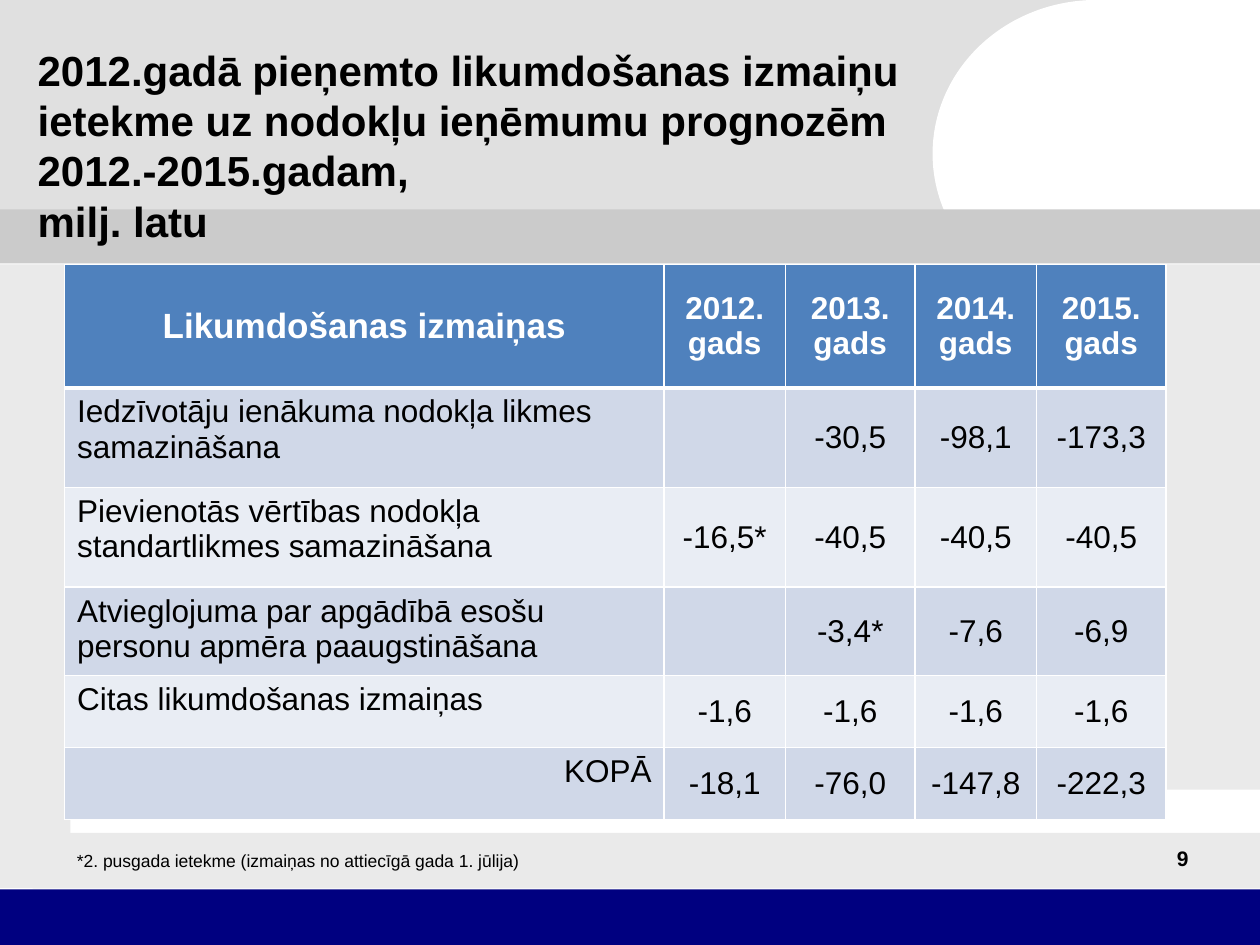
import pptx
import pptx.dml.color
import pptx.enum.shapes
import pptx.enum.text
import pptx.oxml.ns
import pptx.util
from lxml import etree
from pptx.util import Cm

ALIGN = pptx.enum.text.PP_ALIGN
ANCHOR = pptx.enum.text.MSO_ANCHOR
SHAPE = pptx.enum.shapes.MSO_SHAPE

# Backdrop shapes, back to front: kind, left, top, width, height (cm), fill
BACK = [
    (SHAPE.RECTANGLE, 0, 0, 23.09, 4.29, "E0E0E0"),
    (SHAPE.OVAL, 18.8, 0, 6.6, 6.2, "FFFFFF"),
    (SHAPE.RECTANGLE, 0, 5.33, 1.42, 12.57, "EAEAEA"),
    (SHAPE.RECTANGLE, 0.66, 16.79, 24.74, 1.12, "EAEAEA"),
    (SHAPE.RECTANGLE, 0, 17.93, 25.4, 1.12, "000080"),
    (SHAPE.RECTANGLE, 23.47, 5.33, 1.93, 10.59, "EAEAEA"),
    (SHAPE.RECTANGLE, 21.89, 0, 3.51, 5.13, "FFFFFF"),
    (SHAPE.RECTANGLE, 0, 4.22, 25.4, 1.09, "CBCBCB"),
]

TITLE = ("2012.gadā pieņemto likumdošanas izmaiņu ietekme uz nodokļu "
         "ieņēmumu prognozēm 2012.-2015.gadam, \nmilj. latu")
NOTE = "*2. pusgada ietekme (izmaiņas no attiecīgā gada 1. jūlija)"

ROWS = [
    ("Likumdošanas izmaiņas", "2012. gads", "2013. gads", "2014. gads",
     "2015. gads"),
    ("Iedzīvotāju ienākuma nodokļa likmes samazināšana",
     "", "-30,5", "-98,1", "-173,3"),
    ("Pievienotās vērtības nodokļa standartlikmes samazināšana",
     "-16,5*", "-40,5", "-40,5", "-40,5"),
    ("Atvieglojuma par apgādībā esošu personu apmēra paaugstināšana",
     "", "-3,4*", "-7,6", "-6,9"),
    ("Citas likumdošanas izmaiņas", "-1,6", "-1,6", "-1,6", "-1,6"),
    ("KOPĀ", "-18,1", "-76,0", "-147,8", "-222,3"),
]
WIDTHS = [12.09, 2.44, 2.62, 2.44, 2.62]
HEIGHTS = [2.49, 2.01, 2.01, 1.45, 1.45, 1.45]


def color(code):
    return pptx.dml.color.RGBColor.from_string(code)


def write(frame, text, size=18, ink="000000", bold=False, align=ALIGN.LEFT):
    """Put one formatted paragraph in a text frame."""
    para = frame.paragraphs[0]
    para.text = text
    para.alignment = align
    for run in para.runs:
        font = run.font
        font.name = "Arial"
        font.size = pptx.util.Pt(size)
        font.bold = bold
        font.color.rgb = color(ink)


def block(slide, kind, left, top, width, height, fill):
    shape = slide.shapes.add_shape(kind, Cm(left), Cm(top), Cm(width),
                                   Cm(height))
    shape.shadow.inherit = False
    shape.fill.solid()
    shape.fill.fore_color.rgb = color(fill)
    shape.line.fill.background()


def label(slide, text, left, top, width, height, anchor=ANCHOR.TOP, **style):
    box = slide.shapes.add_textbox(Cm(left), Cm(top), Cm(width), Cm(height))
    frame = box.text_frame
    frame.word_wrap = True
    frame.vertical_anchor = anchor
    write(frame, text, **style)


def border(cell, base):
    """Draw white cell edges; base is the bottom width in points."""
    props = cell._tc.get_or_add_tcPr()
    name = pptx.oxml.ns.qn
    edges = [("a:lnL", 1), ("a:lnR", 1), ("a:lnT", 1), ("a:lnB", base)]
    for spot, (tag, width) in enumerate(edges):
        line = etree.Element(name(tag), w=str(pptx.util.Pt(width)))
        fill = etree.SubElement(line, name("a:solidFill"))
        etree.SubElement(fill, name("a:srgbClr"), val="FFFFFF")
        props.insert(spot, line)


def style(row, col):
    """Text format of a table cell by its place."""
    if row == 0:
        return dict(size=18 if col else 20, ink="FFFFFF", bold=True,
                    align=ALIGN.CENTER)
    if col:
        return dict(align=ALIGN.CENTER)
    return dict(align=ALIGN.RIGHT if row == len(ROWS) - 1 else ALIGN.LEFT)


def grid(slide, left, top):
    table = slide.shapes.add_table(
        len(ROWS), len(WIDTHS), Cm(left), Cm(top), Cm(sum(WIDTHS)),
        Cm(sum(HEIGHTS))).table
    for col, width in zip(table.columns, WIDTHS):
        col.width = Cm(width)
    for r, (texts, height) in enumerate(zip(ROWS, HEIGHTS)):
        table.rows[r].height = Cm(height)
        band = "4F81BD" if r == 0 else "D0D8E8" if r % 2 else "E9EDF4"
        for c, text in enumerate(texts):
            cell = table.cell(r, c)
            cell.fill.solid()
            cell.fill.fore_color.rgb = color(band)
            border(cell, 1 if r else 3)
            if r == 0 or c:
                cell.vertical_anchor = ANCHOR.MIDDLE
            if text:
                write(cell.text_frame, text, **style(r, c))


def main():
    deck = pptx.Presentation()
    deck.slide_width, deck.slide_height = Cm(25.4), Cm(19.05)
    slide = deck.slides.add_slide(deck.slide_layouts[6])

    # Backdrop
    for part in BACK:
        block(slide, *part)

    # Title and table
    label(slide, TITLE, 0.51, 1.32, 20.07, 3.2, ANCHOR.MIDDLE,
          size=24, bold=True)
    grid(slide, 1.3, 5.33)

    # Page number and footnote
    label(slide, "9", 18.47, 16.92, 5.74, 1.27, size=12, bold=True,
          align=ALIGN.RIGHT)
    label(slide, NOTE, 1.3, 17.02, 12.7, 0.69, size=10)

    deck.save("out.pptx")


if __name__ == "__main__":
    main()
